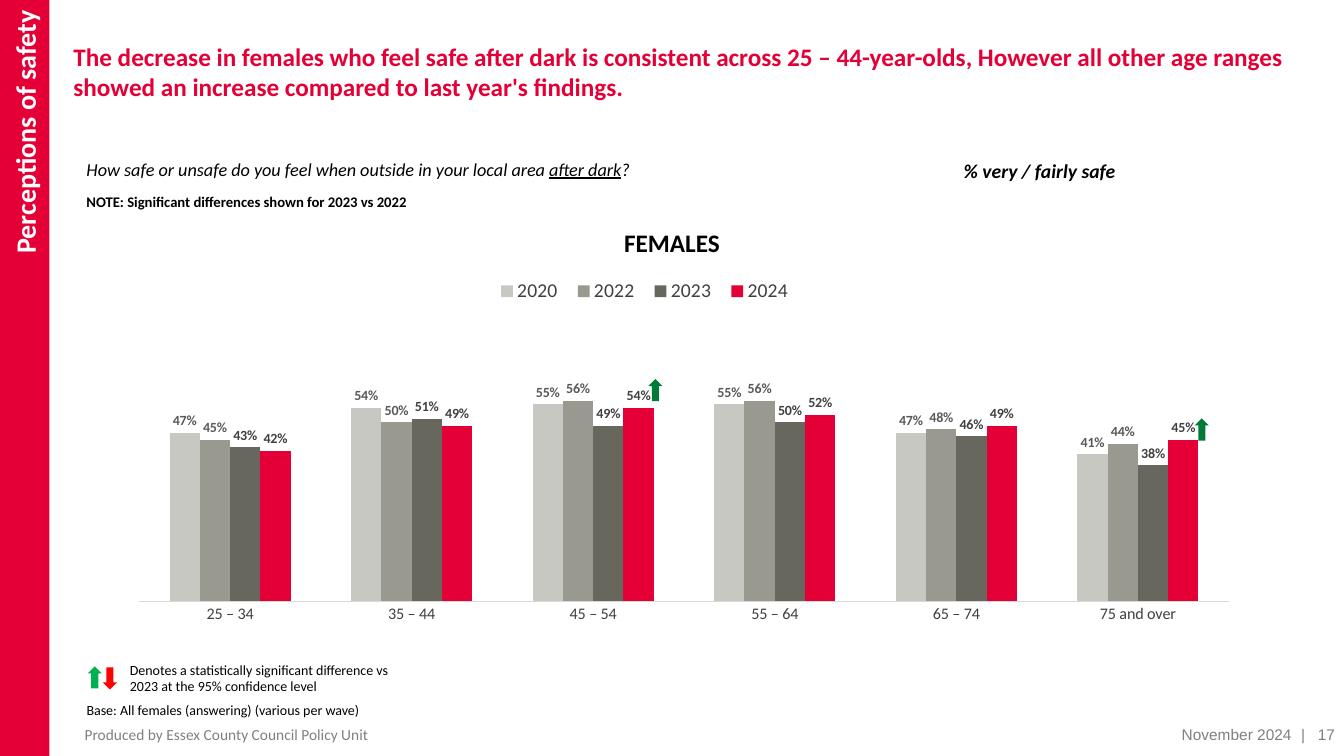
from dataclasses import dataclass, field

from lxml import etree
from pptx import Presentation
from pptx.chart.data import CategoryChartData
from pptx.dml.color import RGBColor
from pptx.enum.chart import XL_CHART_TYPE, XL_LABEL_POSITION, XL_LEGEND_POSITION, XL_TICK_MARK
from pptx.enum.shapes import MSO_SHAPE
from pptx.enum.text import MSO_ANCHOR, PP_ALIGN
from pptx.oxml.ns import qn
from pptx.util import Pt

PX = 9144  # 100 px to the inch
LEFT, CENTER, RIGHT = PP_ALIGN.LEFT, PP_ALIGN.CENTER, PP_ALIGN.RIGHT
TOP, MIDDLE = MSO_ANCHOR.TOP, MSO_ANCHOR.MIDDLE
RECT, UP, DOWN = MSO_SHAPE.RECTANGLE, MSO_SHAPE.UP_ARROW, MSO_SHAPE.DOWN_ARROW
COLUMNS = XL_CHART_TYPE.COLUMN_CLUSTERED
OUTSIDE = XL_LABEL_POSITION.OUTSIDE_END
BOTTOM = XL_LEGEND_POSITION.BOTTOM
NO_TICK = XL_TICK_MARK.NONE


@dataclass(frozen=True)
class Theme:
    body: str = "Calibri"
    footer: str = "Arial"
    red: str = "E40037"
    white: str = "FFFFFF"
    black: str = "000000"
    grey: str = "808080"
    axis_text: str = "404040"
    axis_line: str = "D9D9D9"
    label: str = "595959"
    rise: str = "007A37"
    key_up: str = "00B050"
    key_down: str = "FF0000"
    banner: float = 20
    title: float = 18
    measure: float = 14
    question: float = 13
    axis: float = 11.5
    foot: float = 11
    note: float = 10.5
    small: float = 10


T = Theme()


@dataclass(frozen=True)
class Label:
    box: tuple[int, int, int, int]
    runs: tuple[tuple[str, dict], ...]
    size: float
    color: str = T.black
    font: str = T.body
    style: dict = field(default_factory=dict)
    align: PP_ALIGN = LEFT
    anchor: MSO_ANCHOR = TOP
    para: dict = field(default_factory=dict)
    indent: int = 0


@dataclass(frozen=True)
class Arrow:
    x: int
    y: int
    kind: MSO_SHAPE
    color: str


@dataclass(frozen=True)
class Wave:
    year: str
    percents: tuple[int, ...]
    color: str
    label: str


BOLD, ITALIC = {"bold": True}, {"italic": True}
FOOT = {"size": T.foot, "color": T.grey, "anchor": MIDDLE}

LABELS = (
    Label((63, 36, 1228, 116), (("The decrease in females who feel safe after dark is consistent across "
          "25 – 44-year-olds, However all other age ranges showed an increase compared to "
          "last year's findings.", {}),), T.title, T.red, style=BOLD),
    Label((76, 152, 863, 32), (
        ("How safe or unsafe do you feel when outside in your local area ", {}),
        ("after dark", {"underline": True}), ("?", {})), T.question, style=ITALIC),
    Label((946, 153, 254, 34), (("% very / fairly safe", {}),), T.measure,
          style=BOLD | ITALIC, para={"space_before": Pt(6)}),
    Label((76, 186, 1073, 28), (("NOTE: Significant differences shown for 2023 vs 2022", {}),),
          T.note, style=BOLD),
    Label((592, 221, 149, 40), (("FEMALES", {}),), T.title, style=BOLD, align=CENTER),
    Label((119, 651, 304, 44), (("Denotes a statistically significant difference vs 2023 "
          "at the 95% confidence level", {}),), T.small),
    Label((76, 691, 711, 27), (("Base: All females (answering) (various per wave)", {}),), T.small),
    Label((65, 721, 654, 15), (("Produced by Essex County Council Policy Unit", {}),),
          indent=9, **FOOT),
    Label((1051, 721, 240, 15), (("November 2024", {}),), font=T.footer, align=RIGHT, **FOOT),
    Label((1249, 721, 85, 15), (("|   17", {}),), font=T.footer, align=RIGHT, **FOOT),
)
ARROWS = (
    Arrow(87, 661, UP, T.key_up),
    Arrow(102, 662, DOWN, T.key_down),
    Arrow(643, 376, UP, T.rise),
    Arrow(1185, 415, UP, T.rise),
)
AGES = ("25 – 34", "35 – 44", "45 – 54", "55 – 64", "65 – 74", "75 and over")
WAVES = (
    Wave("2020", (47, 54, 55, 55, 47, 41), "C8C8C3", T.label),
    Wave("2022", (45, 50, 56, 56, 48, 44), "99998F", T.label),
    Wave("2023", (43, 51, 49, 50, 46, 38), "67675E", T.axis_text),
    Wave("2024", (42, 49, 54, 52, 49, 45), T.red, T.axis_text),
)


def px(*lengths: int) -> list[int]:
    return [n * PX for n in lengths]


def set_font(font, size: float, color: str, name: str = T.body, **style) -> None:
    for key, value in {"size": Pt(size), "name": name, **style}.items():
        setattr(font, key, value)
    font.color.rgb = RGBColor.from_string(color)


def add_label(slide, item: Label) -> None:
    tf = slide.shapes.add_textbox(*px(*item.box)).text_frame
    tf.word_wrap = True
    tf.vertical_anchor = item.anchor
    tf.margin_left = (10 + item.indent) * PX
    p = tf.paragraphs[0]
    for key, value in {"alignment": item.align, **item.para}.items():
        setattr(p, key, value)
    for text, extra in item.runs:
        r = p.add_run()
        r.text = text
        set_font(r.font, item.size, item.color, item.font, **item.style, **extra)


def add_block(slide, kind: MSO_SHAPE, box: tuple[int, int, int, int], color: str):
    sp = slide.shapes.add_shape(kind, *px(*box))
    sp.shadow.inherit = False
    sp.fill.solid()
    sp.fill.fore_color.rgb = RGBColor.from_string(color)
    sp.line.fill.background()
    return sp


def add_banner(slide) -> None:
    tf = add_block(slide, RECT, (0, 0, 49, 750), T.red).text_frame
    tf._txBody.bodyPr.set("vert", "vert270")
    margins = {"margin_left": 10, "margin_top": 10, "margin_right": 10, "margin_bottom": 5}
    for key, value in margins.items():
        setattr(tf, key, value * PX)
    tf.vertical_anchor = MIDDLE
    p = tf.paragraphs[0]
    p.alignment = RIGHT
    r = p.add_run()
    r.text = "Perceptions of safety"
    set_font(r.font, T.banner, T.white, bold=True)


def place(parent, index: int, inner: bool = False, **area: float) -> None:
    """Give a chart part a manual layout in fractions of the chart."""
    for old in parent.findall(qn("c:layout")):
        parent.remove(old)
    layout = etree.Element(qn("c:layout"))
    manual = etree.SubElement(layout, qn("c:manualLayout"))
    modes = {"layoutTarget": "inner"} if inner else {}
    for tag, value in {**modes, "xMode": "edge", "yMode": "edge", **area}.items():
        etree.SubElement(manual, qn(f"c:{tag}")).set("val", str(value))
    parent.insert(index, layout)


def add_safety_chart(slide) -> None:
    data = CategoryChartData(number_format="0%")
    data.categories = AGES
    for wave in WAVES:
        data.add_series(wave.year, [n / 100 for n in wave.percents])
    chart = slide.shapes.add_chart(COLUMNS, *px(127, 241, 1114, 456), data).chart
    chart.has_title = False
    set_font(chart.font, T.small, T.black)

    # Axes
    axis, values = chart.category_axis, chart.value_axis
    axis.major_tick_mark = NO_TICK
    set_font(axis.tick_labels.font, T.axis, T.axis_text)
    axis.format.line.color.rgb = RGBColor.from_string(T.axis_line)
    axis.format.line.width = Pt(0.75)
    limits = {"minimum_scale": 0, "maximum_scale": 1, "has_major_gridlines": False, "visible": False}
    for key, value in limits.items():
        setattr(values, key, value)

    # Columns and their labels
    plot = chart.plots[0]
    for key, value in {"gap_width": 200, "overlap": 0, "vary_by_categories": False}.items():
        setattr(plot, key, value)
    for wave, series in zip(WAVES, plot.series):
        series.format.fill.solid()
        series.format.fill.fore_color.rgb = RGBColor.from_string(wave.color)
        labels = series.data_labels
        shown = {"show_value": True, "number_format": "0%",
                 "number_format_is_linked": False, "position": OUTSIDE}
        for key, value in shown.items():
            setattr(labels, key, value)
        set_font(labels.font, T.small, wave.label, bold=True)

    # Legend above the columns
    chart.has_legend = True
    legend = chart.legend
    legend.position = BOTTOM
    legend.include_in_layout = False
    set_font(legend.font, T.measure, T.axis_text)
    place(legend._element, 1, x=0.32, y=0.06, w=0.28, h=0.09)
    place(chart._chartSpace.chart.plotArea, 0, inner=True, x=0.01, y=0, w=0.97, h=0.78)


def main() -> None:
    prs = Presentation()
    prs.slide_width, prs.slide_height = px(1333, 750)
    slide = prs.slides.add_slide(prs.slide_layouts[6])
    add_banner(slide)
    add_safety_chart(slide)
    for item in LABELS:
        add_label(slide, item)
    for arrow in ARROWS:
        add_block(slide, arrow.kind, (arrow.x, arrow.y, 14, 22), arrow.color)
    prs.save("out.pptx")


if __name__ == "__main__":
    main()
